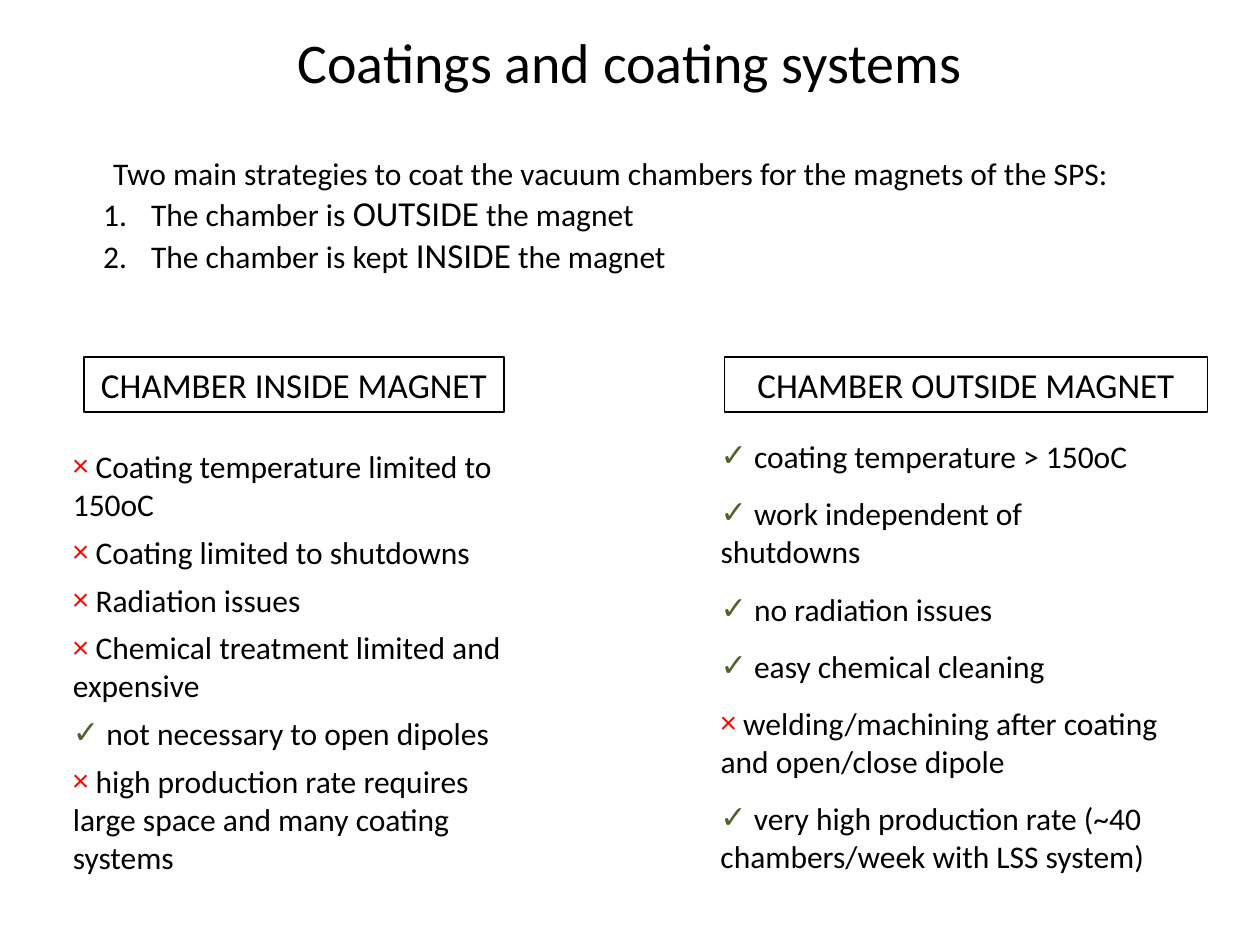
from lxml import etree
from pptx import Presentation
from pptx.dml.color import RGBColor
from pptx.enum.shapes import MSO_SHAPE
from pptx.enum.text import MSO_ANCHOR, MSO_AUTO_SIZE, PP_ALIGN
from pptx.oxml.ns import qn
from pptx.util import Inches, Pt

RECT = MSO_SHAPE.RECTANGLE
TOP = MSO_ANCHOR.TOP
FIT = MSO_AUTO_SIZE.SHAPE_TO_FIT_TEXT
CENTER = PP_ALIGN.CENTER
COLORS = {"text": "000000", "×": "FF0000", "✓": "4F6228"}
FONT = "Calibri"

prs = Presentation()
prs.slide_width, prs.slide_height = Inches(10), Inches(7.5)
UNIT = prs.slide_width / 120
s = prs.slides.add_slide(prs.slide_layouts[6])


def grid(*cells):
    return [round(c * UNIT) for c in cells]


def write(p, text, size, align=None):
    p.font.name, p.font.size = FONT, Pt(size)
    p.font.color.rgb = RGBColor.from_string(COLORS["text"])
    p.alignment = align
    r = p.add_run()
    r.text = text
    return r


sp = s.shapes.add_textbox(*grid(26.76, 2.04, 66.48, 7.68))
tf = sp.text_frame
tf.word_wrap, tf.auto_size = False, FIT
write(tf.paragraphs[0], "Coatings and coating systems", 32, CENTER)

sp = s.shapes.add_textbox(*grid(8.64, 14.04, 99.72, 12.96))
tf = sp.text_frame
tf.word_wrap, tf.auto_size = False, FIT
write(tf.paragraphs[0], "Two main strategies to coat the vacuum chambers "
      "for the magnets of the SPS: ", 18, CENTER)
for start, place in [("The chamber is ", "OUTSIDE"), ("The chamber is kept ", "INSIDE")]:
    p = tf.add_paragraph()
    write(p, start, 18)
    write(p, place, 18).font.size = Pt(20)
    write(p, " the magnet", 18)
    pPr = p._p.get_or_add_pPr()
    indent = Inches(0.38)
    pPr.set("marL", str(indent))
    pPr.set("indent", str(-indent))
    num = etree.Element(qn("a:buAutoNum"), type="arabicPeriod")
    pPr.insert(0, num)

columns = [
    ("CHAMBER INSIDE MAGNET", 8, 40, 5.76, 42, -0.3, [
        ("×", "Coating temperature limited to 150oC", 2, 47),
        ("×", "Coating limited to shutdowns", 1, 41.3),
        ("×", "Radiation issues", 1, 41.3),
        ("×", "Chemical treatment limited and expensive", 2, 45.8),
        ("✓", "not necessary to open dipoles", 1, 48.6),
        ("×", "high production rate requires large space and many coating systems", 3, 45.8),
    ]),
    ("CHAMBER OUTSIDE MAGNET", 69, 46, 67.44, 41.04, 0.6, [
        ("✓", "coating temperature > 150oC", 1, 45),
        ("✓", "work independent of shutdowns", 2, 45),
        ("✓", "no radiation issues", 1, 45),
        ("✓", "easy chemical cleaning", 1, 45),
        ("×", "welding/machining after coating and open/close dipole", 2, 45),
        ("✓", "very high production rate (~40 chambers/week with LSS system)", 2, 47.5),
    ]),
]
for heading, left, width, x, y, gap, items in columns:
    sp = s.shapes.add_shape(RECT, *grid(left, 34, width, 5.25))
    sp.shadow.inherit = False
    sp.fill.background()
    sp.line.color.rgb = RGBColor.from_string(COLORS["text"])
    sp.line.width = Pt(0.75)
    tf = sp.text_frame
    tf.word_wrap, tf.auto_size, tf.vertical_anchor = True, FIT, TOP
    write(tf.paragraphs[0], heading, 20, CENTER)

    group = s.shapes.add_group_shape()
    for mark, text, lines, item_width in items:
        height = 1.2 + 3.64 * lines
        sp = group.shapes.add_textbox(*grid(x, y, item_width, height))
        tf = sp.text_frame
        tf.word_wrap, tf.auto_size = True, FIT
        p = tf.paragraphs[0]
        write(p, " " + text, 18)
        pPr = p._p.get_or_add_pPr()
        color = etree.Element(qn("a:buClr"))
        etree.SubElement(color, qn("a:srgbClr"), val=COLORS[mark])
        pPr.insert(0, color)
        pPr.insert(1, etree.Element(qn("a:buFont"), typeface=FONT))
        pPr.insert(2, etree.Element(qn("a:buChar"), char=mark))
        y += height + gap

prs.save("out.pptx")
